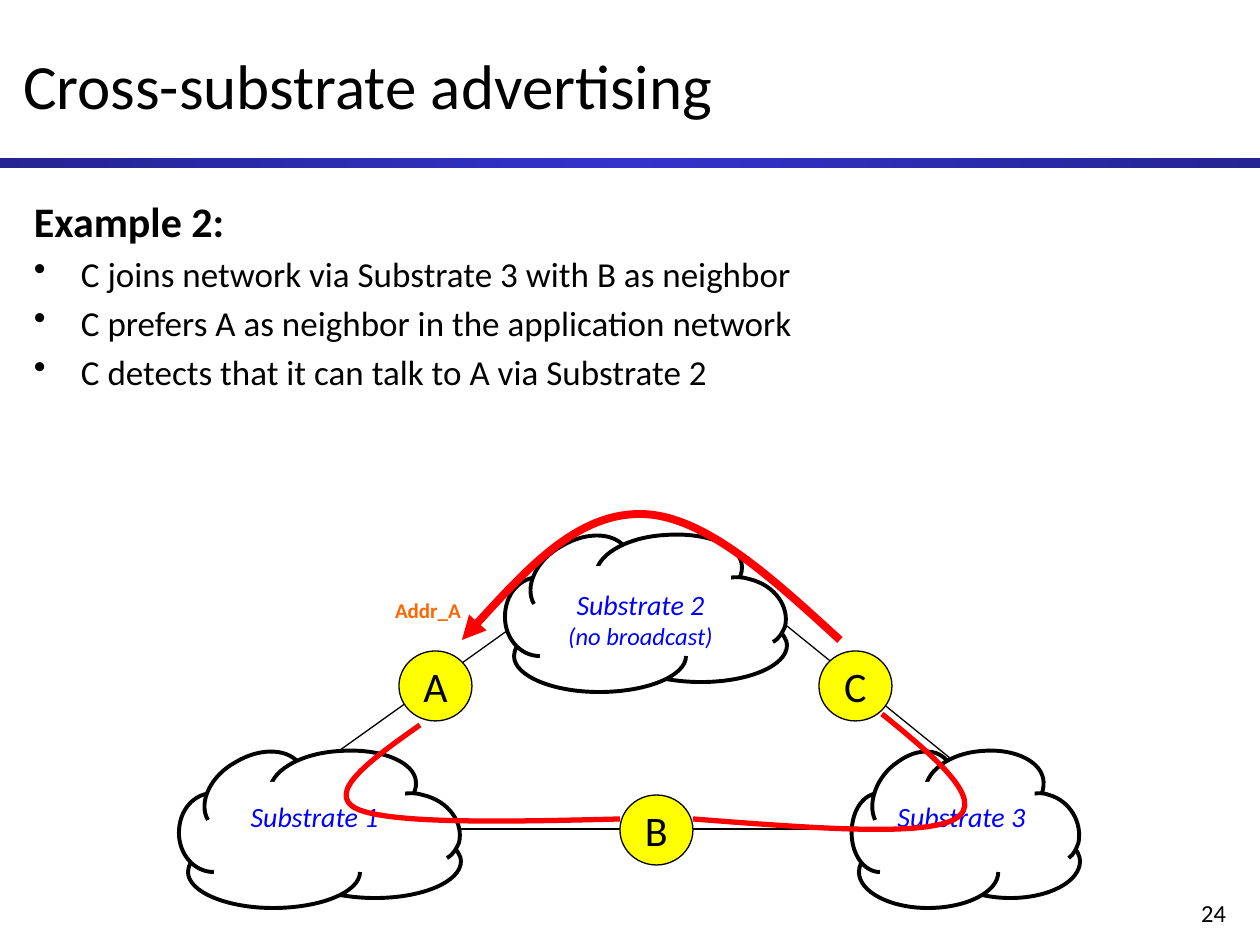
import copy
import dataclasses

import pptx
import pptx.util
import pptx.dml.color
import pptx.enum.shapes
import pptx.enum.text
import pptx.oxml
import pptx.oxml.ns

PX = 914400 / 126
ALIGN = pptx.enum.text.PP_ALIGN
ANCHOR = pptx.enum.text.MSO_ANCHOR
SHAPE = pptx.enum.shapes.MSO_SHAPE
NS = pptx.oxml.ns.nsdecls("a")


@dataclasses.dataclass(frozen=True)
class Theme:
    font: str = "Calibri"
    ink: str = "000000"
    paper: str = "FFFFFF"
    bar_edge: str = "242492"
    bar_mid: str = "3333CC"
    node: str = "FFFF00"
    cloud_text: str = "0000FF"
    route: str = "FF0000"
    address: str = "FF6600"
    title: int = 36
    heading: int = 24
    bullet: int = 20
    label: int = 16
    small: int = 14
    tag: int = 12


CLOUD_RECT = (0, 64, 223, 68)
LABEL_RECT = (10, 32, 181, 68)
PUFFS = [
    ([(126, 145), (138, 147), (149, 148), (161, 148), (208, 148), (247, 132),
      (247, 111), (247, 106), (243, 100), (237, 94)], (161, 111)),
    ([(-15, 103), (-22, 109), (-26, 116), (-26, 122), (-26, 142), (13, 158),
      (59, 158), (107, 158), (146, 142), (146, 122)], (59, 122)),
    ([(18, 48), (12, 45), (6, 43), (0, 43), (-20, 43), (-35, 60),
      (-35, 83), (-35, 104), (-20, 122), (0, 122)], (0, 83)),
    ([(82, 54), (91, 41), (92, 27), (87, 16), (76, -2), (47, -3),
      (22, 12), (-4, 26), (-16, 53), (-6, 70)], (41, 44)),
    ([(173, 65), (192, 58), (203, 45), (202, 32), (201, 12), (167, -2),
      (126, 1), (86, 3), (54, 22), (56, 43)], (129, 38)),
    ([(233, 108), (240, 104), (242, 99), (245, 93), (250, 73), (235, 51),
      (209, 45), (197, 41), (182, 44), (172, 50)], (201, 80)),
]


def emu(*values):
    return [pptx.util.Emu(round(v * PX)) for v in values]


def rgb(value):
    return pptx.dml.color.RGBColor.from_string(value)


class Deck:
    def __init__(self, prs, theme):
        self.theme = theme
        self.s = prs.slides.add_slide(prs.slide_layouts[6])

    def run(self, p, text, size, color=None, bold=False, italic=False):
        r = p.add_run()
        r.text = text
        r.font.name = self.theme.font
        r.font.size = pptx.util.Pt(size)
        r.font.bold = bold
        r.font.italic = italic
        r.font.color.rgb = rgb(color or self.theme.ink)

    def frame(self, sp, anchor=ANCHOR.TOP, wrap=True, insets=(13, 6, 13, 6)):
        tf = sp.text_frame
        tf.word_wrap = wrap
        tf.vertical_anchor = anchor
        tf.margin_left, tf.margin_top, tf.margin_right, tf.margin_bottom = emu(*insets)
        return tf

    def text(self, box, text, size, align=ALIGN.LEFT, anchor=ANCHOR.TOP, wrap=True, **style):
        sp = self.s.shapes.add_textbox(*emu(*box))
        p = self.frame(sp, anchor, wrap).paragraphs[0]
        p.alignment = align
        self.run(p, text, size, **style)

    def body(self, box, heading, bullets):
        tf = self.frame(self.s.shapes.add_textbox(*emu(*box)))
        self.run(tf.paragraphs[0], heading, self.theme.heading, bold=True)
        for text in bullets:
            p = tf.add_paragraph()
            pPr = p._p.get_or_add_pPr()
            pPr.set("marL", str(emu(47)[0]))
            pPr.set("indent", str(emu(-47)[0]))
            pPr.append(pptx.oxml.parse_xml(f'<a:buChar {NS} char="•"/>'))
            p.space_before = pptx.util.Pt(4)
            self.run(p, text, self.theme.bullet)

    def shape(self, shapes, kind, box, fill, line=None):
        sp = shapes.add_shape(kind, *emu(*box))
        self.paint(sp, fill, line, 0.75)
        return sp

    def paint(self, sp, fill, line, width):
        sp.shadow.inherit = False
        if fill:
            sp.fill.solid()
            sp.fill.fore_color.rgb = rgb(fill)
        else:
            sp.fill.background()
        if line:
            sp.line.color.rgb = rgb(line)
            sp.line.width = pptx.util.Pt(width)
        else:
            sp.line.fill.background()

    def bar(self, box):
        sp = self.shape(self.s.shapes, SHAPE.RECTANGLE, box, self.theme.bar_mid)
        sp.fill.gradient()
        sp.fill.gradient_angle = 0
        first = sp._element.xpath(".//a:gs")[0]
        first.addnext(copy.deepcopy(first))
        colors = (self.theme.bar_edge, self.theme.bar_mid, self.theme.bar_edge)
        for stop, color, position in zip(sp.fill.gradient_stops, colors, (0, 0.5, 1)):
            stop.color.rgb = rgb(color)
            stop.position = position

    def line(self, *ends):
        cx = self.s.shapes.add_connector(pptx.enum.shapes.MSO_CONNECTOR.STRAIGHT, *emu(*ends))
        cx.line.color.rgb = rgb(self.theme.ink)
        cx.line.width = pptx.util.Pt(0.75)
        cx._element.spPr.append(pptx.oxml.parse_xml(f"<a:effectLst {NS}/>"))

    def node(self, x, y, name):
        sp = self.shape(self.s.shapes, SHAPE.OVAL, (x, y, 73, 70), self.theme.node, self.theme.ink)
        p = self.frame(sp, ANCHOR.MIDDLE, False, (0, 0, 0, 0)).paragraphs[0]
        p.alignment = ALIGN.CENTER
        self.run(p, name, self.theme.heading)

    def curve(self, shapes, points, centre=None):
        start, *rest = [emu(*point) for point in points]
        fb = shapes.build_freeform(*start, scale=1.0)
        fb.add_line_segments(rest + ([emu(*centre)] if centre else []), close=bool(centre))
        sp = fb.convert_to_shape()
        legs = sp._element.xpath(".//a:lnTo")
        for i in range(0, len(rest), 3):
            bend = pptx.oxml.parse_xml(f"<a:cubicBezTo {NS}/>")
            legs[i].addprevious(bend)
            for leg in legs[i:i + 3]:
                bend.append(leg[0])
                leg.getparent().remove(leg)
        return sp

    def puff(self, shapes, arc, centre):
        sp = self.curve(shapes, arc, centre)
        self.paint(sp, self.theme.paper, self.theme.ink, 2.25)
        wedge = sp._element.xpath(".//a:path")[0]
        edge = copy.deepcopy(wedge)
        for part in list(edge)[-2:]:
            edge.remove(part)
        edge.set("fill", "none")
        wedge.set("stroke", "0")
        wedge.addprevious(edge)

    def cloud(self, x, y, name, note=None, stretch=1):
        shapes = self.s.shapes.add_group_shape().shapes

        def place(point):
            return x + point[0] * stretch, y + point[1]

        def rect(box):
            return self.shape(shapes, SHAPE.RECTANGLE,
                              (*place(box), box[2] * stretch, box[3]), self.theme.paper)

        rect(CLOUD_RECT)
        for arc, centre in PUFFS:
            self.puff(shapes, [place(point) for point in arc], place(centre))
        insets = (13, 44 if note else 6, 13, 6)
        p = self.frame(rect(LABEL_RECT), ANCHOR.MIDDLE, False, insets).paragraphs[0]
        p.alignment = ALIGN.CENTER
        self.run(p, name, self.theme.label, self.theme.cloud_text, italic=True)
        if note:
            p.add_line_break()
            self.run(p, note, self.theme.small, self.theme.cloud_text, italic=True)

    def route(self, points, width=3, arrow=False):
        sp = self.curve(self.s.shapes, points)
        self.paint(sp, None, self.theme.route, width)
        if arrow:
            sp.line._ln.append(pptx.oxml.parse_xml(f'<a:tailEnd {NS} type="triangle"/>'))


def main():
    prs = pptx.Presentation()
    prs.slide_width, prs.slide_height = emu(1260, 945)
    theme = Theme()
    d = Deck(prs, theme)
    d.bar((0, 158, 1260, 10))
    d.text((977, 892, 262, 32), "24", theme.small, ALIGN.RIGHT)
    d.text((10, 21, 1239, 126), "Cross-substrate advertising", theme.title, anchor=ANCHOR.MIDDLE)
    d.body((21, 189, 1229, 672), "Example 2:", [
        "C joins network via Substrate 3 with B as neighbor",
        "C prefers A as neighbor in the application network",
        "C detects that it can talk to A via Substrate 2",
    ])
    d.line(766, 609, 987, 788)
    d.line(441, 829, 861, 829)
    d.line(273, 798, 567, 588)
    d.node(620, 795, "B")
    d.node(819, 651, "C")
    d.cloud(880, 750, "Substrate 3", stretch=0.81)
    d.cloud(214, 750, "Substrate 1")
    d.node(399, 651, "A")
    d.cloud(540, 534, "Substrate 2", "(no broadcast)")
    d.route([(420, 725), (372, 759), (324, 793), (357, 809),
             (391, 824), (505, 822), (620, 819)])
    d.route([(693, 819), (809, 828), (924, 837), (955, 819),
             (987, 801), (935, 757), (882, 714)])
    d.route([(840, 640), (771, 577), (703, 514), (640, 514),
             (577, 514), (519, 577), (462, 640)], 4.5, True)
    d.text((382, 592, 92, 38), "Addr_A", theme.tag, wrap=False, color=theme.address, bold=True)
    prs.save("out.pptx")


if __name__ == "__main__":
    main()
